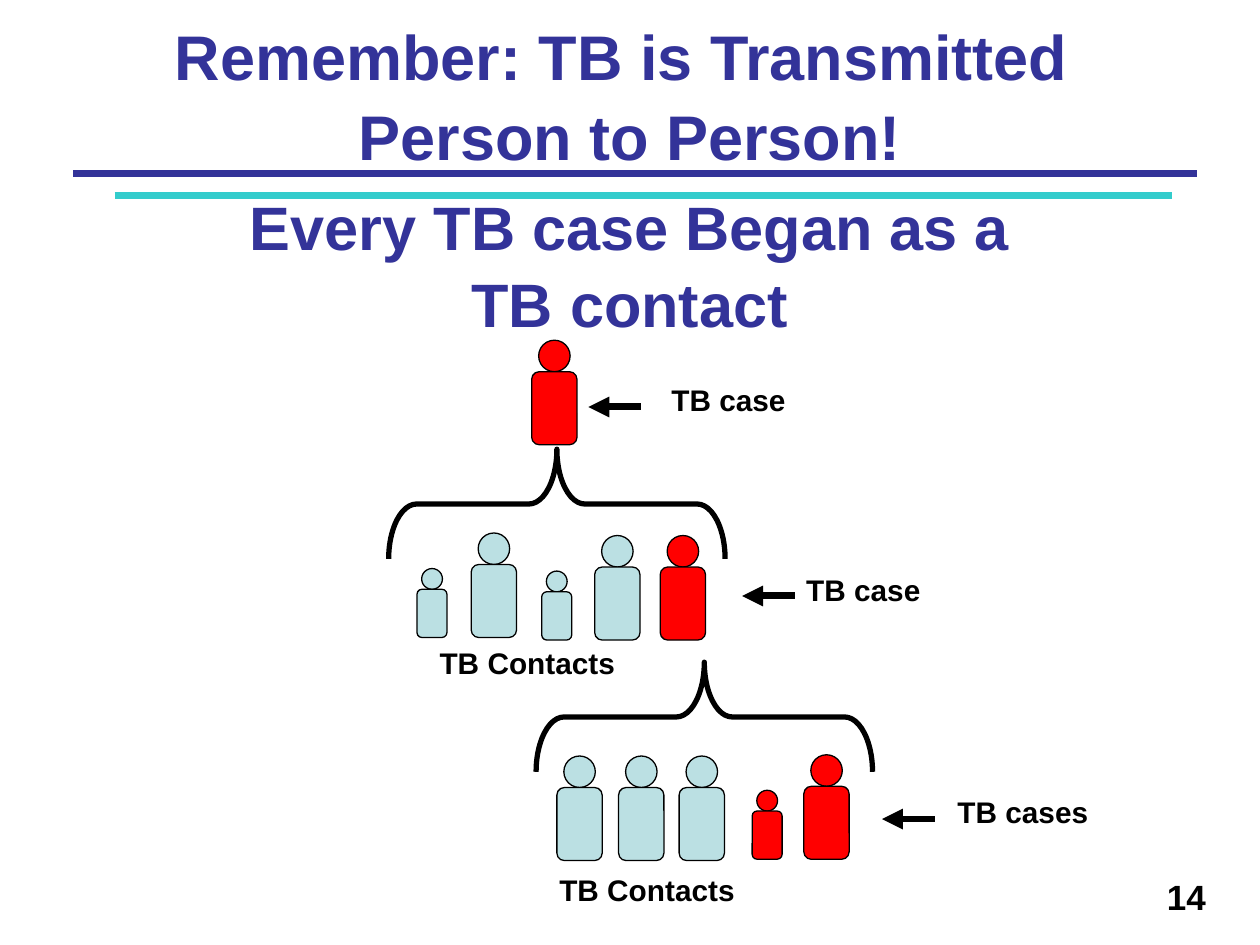
from lxml import etree
from pptx import Presentation
from pptx.dml.color import RGBColor
from pptx.enum.shapes import MSO_CONNECTOR, MSO_SHAPE
from pptx.enum.text import MSO_ANCHOR, MSO_AUTO_SIZE, PP_ALIGN
from pptx.oxml.ns import qn
from pptx.util import Inches, Pt

NAVY = RGBColor(0x33, 0x33, 0x99)
TEAL = RGBColor(0x33, 0xCC, 0xCC)
RED = RGBColor(0xFF, 0, 0)
PALE = RGBColor(0xBB, 0xE0, 0xE3)
BLACK = RGBColor(0, 0, 0)
OVAL, ROUND = MSO_SHAPE.OVAL, MSO_SHAPE.ROUNDED_RECTANGLE
BRACE, STRAIGHT = MSO_SHAPE.RIGHT_BRACE, MSO_CONNECTOR.STRAIGHT
LEFT, CENTER, RIGHT = PP_ALIGN.LEFT, PP_ALIGN.CENTER, PP_ALIGN.RIGHT
TOP, BOTTOM = MSO_ANCHOR.TOP, MSO_ANCHOR.BOTTOM
ADULT, CHILD = 1, 0.66

# Content, in inches
HEAD = ["Remember: TB is Transmitted ", "Person to Person!"]
CLAIM = ["Every TB case Began as a", "TB contact"]
RULES = [(0.58, 9.5, 1.38, NAVY), (0.91, 9.3, 1.55, TEAL)]
LABELS = [  # text, left, top, width
    ("TB case", 5.23, 2.98, 2.5),
    ("TB case", 6.3, 4.49, 1.59),
    ("TB Contacts", 3.39, 5.07, 2.25),
    ("TB Contacts", 4.34, 6.87, 2.25),
    ("TB cases", 7.5, 6.25, 1.75),
]
PEOPLE = [  # left, foot, size, colour
    (4.22, 3.53, ADULT, RED),
    (3.31, 5.06, CHILD, PALE), (3.74, 5.06, ADULT, PALE),
    (4.3, 5.08, CHILD, PALE), (4.72, 5.08, ADULT, PALE),
    (5.24, 5.08, ADULT, RED),
    (4.42, 6.83, ADULT, PALE), (4.91, 6.83, ADULT, PALE),
    (5.39, 6.83, ADULT, PALE), (5.97, 6.82, CHILD, RED),
    (6.38, 6.82, ADULT, RED),
]
BRACES = [(4.42, 4.0), (5.59, 5.69)]  # centres
ARROWS = [(4.67, 3.23), (5.89, 4.73), (7, 6.5)]  # tips

deck = Presentation()
deck.slide_width, deck.slide_height = Inches(10), Inches(7.5)
slide = deck.slides.add_slide(deck.slide_layouts[5])


def place(shape, *box):
    shape.left, shape.top, shape.width, shape.height = map(Inches, box)


def write(shape, lines, size, color, align=LEFT, anchor=TOP, gap=1):
    frame = shape.text_frame
    frame.word_wrap = True
    frame.auto_size = MSO_AUTO_SIZE.NONE
    frame.vertical_anchor = anchor
    para = frame.paragraphs[0]
    para.alignment = align
    para.line_spacing = gap
    for i, line in enumerate(lines):
        if i:
            para.add_line_break()
        run = para.add_run()
        run.text = line
        font = run.font
        font.name, font.size, font.bold = "Arial", Pt(size), True
        font.color.rgb = color


def add_text(box, *style):
    write(slide.shapes.add_textbox(*map(Inches, box)), *style)


def add_line(x1, x2, y, color):
    line = slide.shapes.add_connector(
        STRAIGHT, *map(Inches, (x1, y, x2, y)))
    line.line.color.rgb = color
    line.line.width = Pt(4)
    etree.SubElement(line._element.spPr, qn("a:effectLst"))
    return line


def add_part(group, kind, box, color):
    part = group.shapes.add_shape(kind, *map(Inches, box))
    part.shadow.inherit = False
    part.fill.solid()
    part.fill.fore_color.rgb = color
    part.line.color.rgb = BLACK
    part.line.width = Pt(0.75)


def add_person(left, foot, size, color):
    group = slide.shapes.add_group_shape()
    wide, tall, ball = 0.36 * size, 0.58 * size, 0.25 * size
    neck = foot - tall
    add_part(group, OVAL,
             (left + (wide - ball) / 2, neck - ball, ball, ball), color)
    add_part(group, ROUND, (left, neck, wide, tall), color)


def add_brace(x, y, wide=0.87, tall=2.67):
    brace = slide.shapes.add_shape(
        BRACE, *map(Inches, (x - wide / 2, y - tall / 2, wide, tall)))
    brace.rotation = 270
    brace.adjustments[0] = 0.255
    brace.shadow.inherit = False
    brace.fill.background()
    brace.line.color.rgb = BLACK
    brace.line.width = Pt(3)


# Headings and rules
for rule in RULES:
    add_line(*rule)
title = slide.shapes.title
place(title, 0.25, 1.5, 9.5, 1.25)
write(title, CLAIM, 35, NAVY, CENTER, BOTTOM, 1.05)
add_text((0.25, 0.17, 9.5, 1.25), HEAD, 36, NAVY, CENTER, BOTTOM, 1.05)

# Chain of contacts
for brace in BRACES:
    add_brace(*brace)
for person in PEOPLE:
    add_person(*person)
for x, y in ARROWS:
    arrow = add_line(x, x + 0.42, y, BLACK)
    etree.SubElement(arrow.line._get_or_add_ln(), qn("a:headEnd"),
                     type="triangle")
for text, x, y, wide in LABELS:
    add_text((x, y, wide, 0.39), [text], 17, BLACK)

# Page number
add_text((4, 6.9, 5.67, 0.52), ["14"], 20, BLACK, RIGHT)

deck.save("out.pptx")
